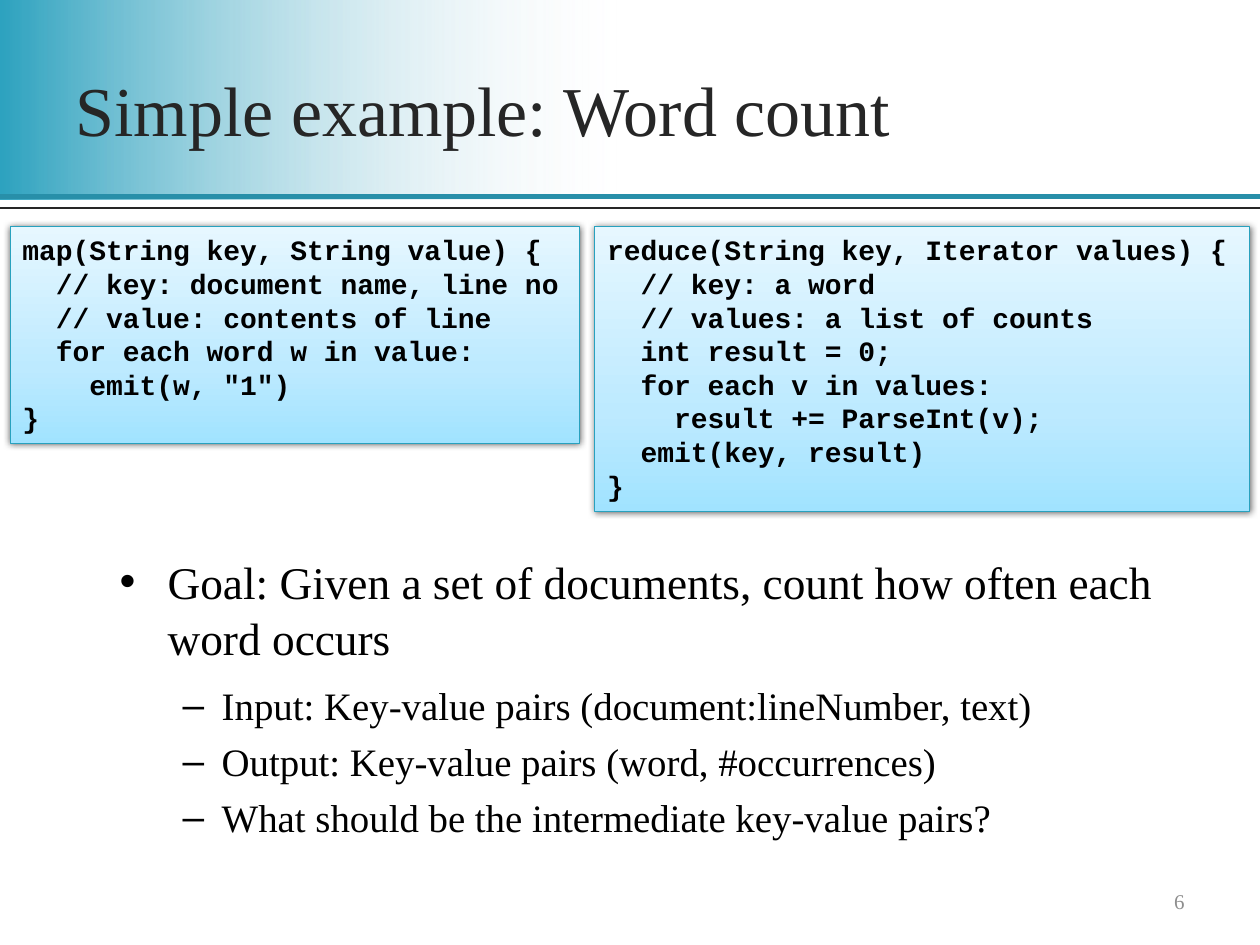
from lxml import etree
from pptx import Presentation
from pptx.dml.color import RGBColor
from pptx.enum.shapes import MSO_CONNECTOR, MSO_SHAPE
from pptx.enum.text import MSO_ANCHOR, MSO_AUTO_SIZE, PP_ALIGN
from pptx.oxml.ns import qn
from pptx.util import Inches, Pt

RECTANGLE = MSO_SHAPE.RECTANGLE
STRAIGHT = MSO_CONNECTOR.STRAIGHT
MIDDLE, TOP = MSO_ANCHOR.MIDDLE, MSO_ANCHOR.TOP
NO_AUTOFIT = MSO_AUTO_SIZE.NONE
LEFT, RIGHT = PP_ALIGN.LEFT, PP_ALIGN.RIGHT

BLACK = RGBColor(0x00, 0x00, 0x00)
CHARCOAL = RGBColor(0x26, 0x26, 0x26)
GRAY = RGBColor(0x8E, 0x8E, 0x8E)
TEAL = RGBColor(0x2D, 0xA2, 0xBF)
DARK_TEAL = RGBColor(0x28, 0x8F, 0xA9)
BOX_BORDER = RGBColor(0x28, 0xA1, 0xBE)
PALE = RGBColor(0xE8, 0xF0, 0xF4)
SKY = RGBColor(0xA1, 0xE3, 0xFF)
LIGHT_SKY = RGBColor(0xBD, 0xEA, 0xFF)
FAINT_SKY = RGBColor(0xE6, 0xF7, 0xFF)

SERIF = "Times New Roman"
MONO = "Courier New"


def set_gradient(shape, stops, angle):
    """Fill with stops of (position %, colour, opacity %)."""
    shape.fill.gradient()
    gradient = shape._element.spPr.find(qn("a:gradFill"))
    for child in list(gradient):
        gradient.remove(child)
    stop_list = etree.SubElement(gradient, qn("a:gsLst"))
    for position, color, opacity in stops:
        stop = etree.SubElement(stop_list, qn("a:gs"), pos=str(position * 1000))
        rgb = etree.SubElement(stop, qn("a:srgbClr"), val=str(color))
        if opacity < 100:
            etree.SubElement(rgb, qn("a:alpha"), val=str(opacity * 1000))
    etree.SubElement(gradient, qn("a:lin"), ang=str(angle * 60000), scaled="0")


def format_runs(paragraph, font_name, size, color, bold=False):
    for run in paragraph.runs:
        run.font.name = font_name
        run.font.size = Pt(size)
        run.font.color.rgb = color
        run.font.bold = bold


presentation = Presentation()
presentation.slide_width = Inches(10)
presentation.slide_height = Inches(7.5)
slide = presentation.slides.add_slide(presentation.slide_layouts[1])
shapes = slide.shapes

# Header band and rules, placed behind the placeholders
band = shapes.add_shape(RECTANGLE, 0, 0, Inches(10), Inches(1.58))
band.shadow.inherit = False
band.line.fill.background()
set_gradient(band, [(0, TEAL, 100), (49, PALE, 0)], 0)
header = [band]
for y, color, width in [(1.56, DARK_TEAL, 3), (1.65, CHARCOAL, 1.25)]:
    rule = shapes.add_connector(STRAIGHT, 0, Inches(y), Inches(10), Inches(y))
    rule.line.color.rgb = color
    rule.line.width = Pt(width)
    etree.SubElement(rule._element.spPr, qn("a:effectLst"))
    header.append(rule)
for index, part in enumerate(header):
    shapes._spTree.insert(2 + index, part._element)

# Title
title = shapes.title
title.left, title.top = Inches(0.5), Inches(0.17)
title.width, title.height = Inches(9), Inches(1.38)
title.text_frame.text = "Simple example: Word count"
title.text_frame.vertical_anchor = MIDDLE
title.text_frame.auto_size = NO_AUTOFIT
title.text_frame.paragraphs[0].alignment = LEFT
format_runs(title.text_frame.paragraphs[0], SERIF, 40, CHARCOAL)

# Goal list: level, text
goals = [
    (0, "Goal: Given a set of documents, count how often each word occurs"),
    (1, "Input: Key-value pairs (document:lineNumber, text)"),
    (1, "Output: Key-value pairs (word, #occurrences)"),
    (1, "What should be the intermediate key-value pairs?"),
]
# Per level: bullet, left margin, hanging indent, size, space before, space after
levels = [("•", 0.38, 0.38, 25.9, 0, 4), ("–", 0.81, 0.31, 22.2, 4.4, 0)]
body = slide.placeholders[1]
body.left, body.top = Inches(0.85), Inches(4.33)
body.width, body.height = Inches(8.74), Inches(2.27)
body.text_frame.text = "\n".join(text for _, text in goals)
body.text_frame.auto_size = NO_AUTOFIT
for paragraph, (level, _) in zip(body.text_frame.paragraphs, goals):
    bullet, margin, hanging, size, before, after = levels[level]
    paragraph.level = level
    paragraph.line_spacing = 1.04
    paragraph.space_before = Pt(before)
    paragraph.space_after = Pt(after)
    properties = paragraph._p.get_or_add_pPr()
    properties.set("marL", str(Inches(margin)))
    properties.set("indent", str(-Inches(hanging)))
    etree.SubElement(properties, qn("a:buChar"), char=bullet)
    format_runs(paragraph, SERIF, size, BLACK)

# Code boxes
map_code = """map(String key, String value) {
  // key: document name, line no
  // value: contents of line
  for each word w in value:
    emit(w, "1")
}"""
reduce_code = """reduce(String key, Iterator values) {
  // key: a word
  // values: a list of counts
  int result = 0;
  for each v in values:
    result += ParseInt(v);
  emit(key, result)
}"""
for left, width, height, code in [(0.08, 4.52, 1.72, map_code),
                                  (4.72, 5.2, 2.26, reduce_code)]:
    box = shapes.add_shape(RECTANGLE, Inches(left), Inches(1.8),
                           Inches(width), Inches(height))
    set_gradient(box, [(0, SKY, 100), (35, LIGHT_SKY, 100),
                       (100, FAINT_SKY, 100)], 270)
    box.line.color.rgb = BOX_BORDER
    box.line.width = Pt(0.5)

    # Soft glow-like shadow without offset
    box.shadow.inherit = False
    effects = box._element.spPr.find(qn("a:effectLst"))
    shadow = etree.SubElement(effects, qn("a:outerShdw"),
                              blurRad=str(Pt(4)), dist="0", dir="0")
    shadow_color = etree.SubElement(shadow, qn("a:srgbClr"), val=str(BLACK))
    etree.SubElement(shadow_color, qn("a:alpha"), val="64000")

    box.text_frame.text = code
    box.text_frame.word_wrap = False
    box.text_frame.vertical_anchor = TOP
    for paragraph in box.text_frame.paragraphs:
        paragraph.alignment = LEFT
        format_runs(paragraph, MONO, 16, BLACK, bold=True)

# Page number
number = shapes.add_textbox(Inches(7.17), Inches(6.95), Inches(2.33), Inches(0.4))
number.text_frame.text = "6"
number.text_frame.word_wrap = True
number.text_frame.vertical_anchor = MIDDLE
number.text_frame.paragraphs[0].alignment = RIGHT
format_runs(number.text_frame.paragraphs[0], SERIF, 12, GRAY)

presentation.save("out.pptx")
